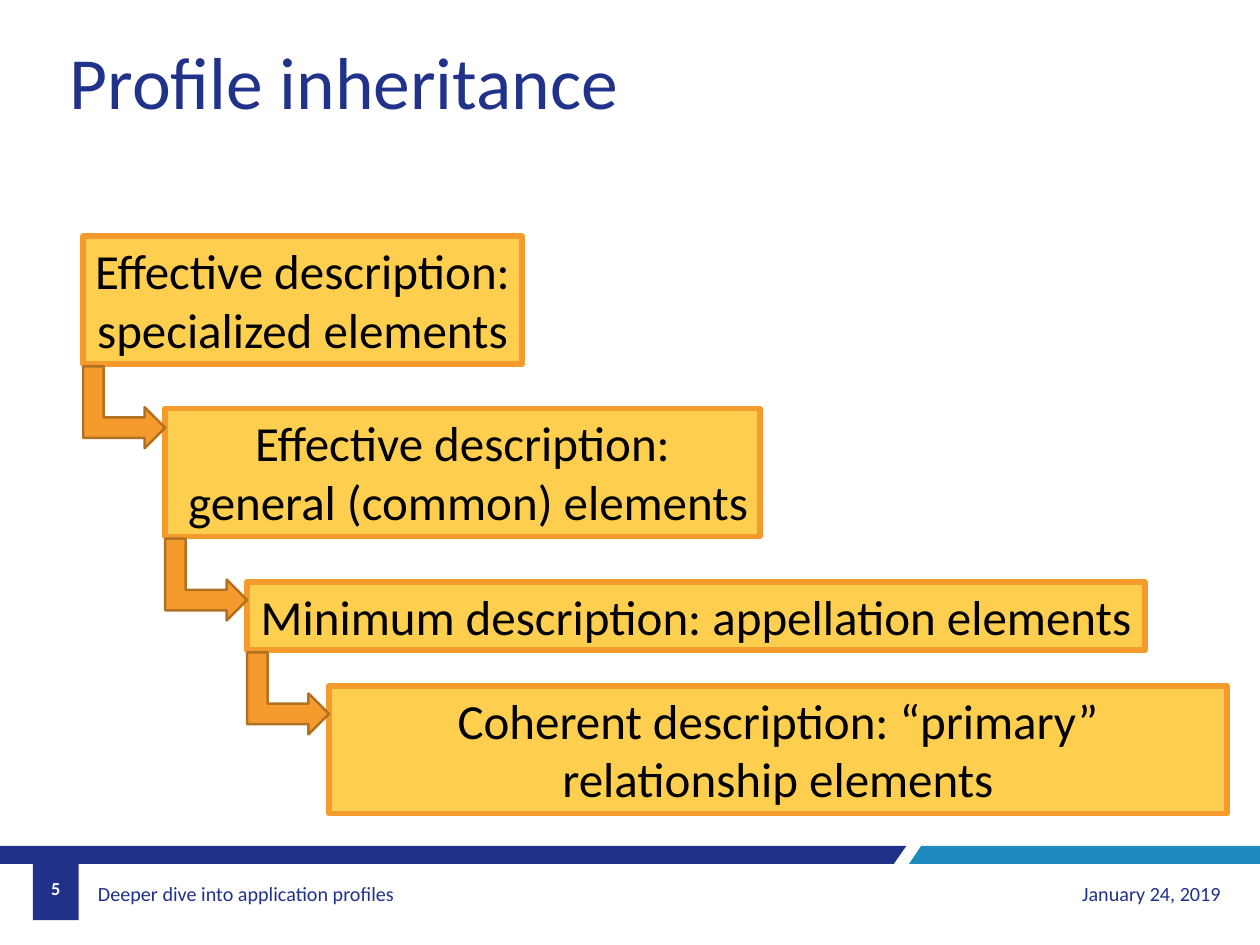
from dataclasses import dataclass

from pptx import Presentation
from pptx.dml.color import RGBColor
from pptx.enum.shapes import MSO_SHAPE
from pptx.enum.text import MSO_ANCHOR, MSO_AUTO_SIZE, PP_ALIGN
from pptx.util import Inches, Pt

COLUMNS, ROWS = 28, 21


@dataclass(frozen=True)
class Theme:
    font: str = "Calibri"
    navy: str = "203189"
    title_color: str = "21328A"
    blue: str = "1D8BC1"
    yellow: str = "FECE4E"
    orange: str = "F59B2D"
    brown: str = "B27120"
    black: str = "000000"
    white: str = "FFFFFF"
    title_size: float = 60
    box_size: float = 40
    footer_size: float = 16.4
    number_size: float = 14.9


class SlideBuilder:
    def __init__(self, presentation, theme):
        self.theme = theme
        self.column = presentation.slide_width / COLUMNS
        self.row = presentation.slide_height / ROWS
        self.slide = presentation.slides.add_slide(presentation.slide_layouts[5])

    def place(self, left, top, width, height):
        return (round(left * self.column), round(top * self.row),
                round(width * self.column), round(height * self.row))

    def paint(self, shape, fill, line=None, line_width=0):
        shape.shadow.inherit = False
        shape.fill.solid()
        shape.fill.fore_color.rgb = RGBColor.from_string(fill)
        if line:
            shape.line.color.rgb = RGBColor.from_string(line)
            shape.line.width = Pt(line_width)
        else:
            shape.line.fill.background()

    def add_lines(self, shape, lines, size, color, align=PP_ALIGN.LEFT,
                  anchor=MSO_ANCHOR.TOP, bold=False, insets=(0.1, 0.05)):
        frame = shape.text_frame
        frame.word_wrap = True
        frame.auto_size = MSO_AUTO_SIZE.NONE
        frame.vertical_anchor = anchor
        frame.margin_left = frame.margin_right = Inches(insets[0])
        frame.margin_top = frame.margin_bottom = Inches(insets[1])
        for index, line in enumerate(lines):
            paragraph = frame.add_paragraph() if index else frame.paragraphs[0]
            paragraph.alignment = align
            run = paragraph.add_run()
            run.text = line
            run.font.name = self.theme.font
            run.font.size = Pt(size)
            run.font.bold = bold
            run.font.color.rgb = RGBColor.from_string(color)

    def title(self, text, *area):
        shape = self.slide.shapes.title
        shape.left, shape.top, shape.width, shape.height = self.place(*area)
        self.add_lines(shape, [text], self.theme.title_size, self.theme.title_color)

    def text(self, text, area, size, color, **style):
        shape = self.slide.shapes.add_textbox(*self.place(*area))
        self.add_lines(shape, [text], size, color, anchor=MSO_ANCHOR.MIDDLE, **style)

    def band(self, points, fill):
        corners = [(round(x * self.column), round(y * self.row)) for x, y in points]
        builder = self.slide.shapes.build_freeform(*corners[0])
        builder.add_line_segments(corners[1:], close=True)
        self.paint(builder.convert_to_shape(), fill)

    def block(self, area, fill, line=None, line_width=0, kind=MSO_SHAPE.RECTANGLE):
        shape = self.slide.shapes.add_shape(kind, *self.place(*area))
        self.paint(shape, fill, line, line_width)
        return shape

    def box(self, lines, *area):
        shape = self.block(area, self.theme.yellow, self.theme.orange, 4.5)
        self.add_lines(shape, lines, self.theme.box_size, self.theme.black,
                       PP_ALIGN.CENTER)

    def step_arrow(self, left, top, size):
        shape = self.block((left, top, size, size), self.theme.orange,
                           self.theme.brown, 2, MSO_SHAPE.BENT_UP_ARROW)
        shape.rotation = 90


def add_footer(builder):
    theme = builder.theme
    top, bottom = 18.8, 19.2
    builder.band([(0, top), (20.14, top), (19.86, bottom), (0, bottom)], theme.navy)
    builder.band([(20.47, top), (COLUMNS, top), (COLUMNS, bottom), (20.2, bottom)],
                 theme.blue)
    builder.block((0.73, top, 1.02, 1.65), theme.navy)
    builder.text("Deeper dive into application profiles", (2.04, 19.31, 7.88, 1.08),
                 theme.footer_size, theme.navy, insets=(0.07, 0.04))
    builder.text("January 24, 2019", (20.14, 19.31, 7.18, 1.08),
                 theme.footer_size, theme.navy, align=PP_ALIGN.RIGHT)
    builder.text("5", (0.73, bottom, 1.02, 1.08), theme.number_size, theme.white,
                 align=PP_ALIGN.CENTER, bold=True)


def add_staircase(builder):
    first_left, step, arrow_gap = 1.85, 1.82, 0.05
    boxes = [
        (["Effective description:", "specialized elements"], 5.25, 9.75, 2.84),
        (["Effective description:", " general (common) elements"], 9.08, 13.22, 2.84),
        (["Minimum description: appellation elements"], 12.94, 19.96, 1.51),
        (["Coherent description: “primary” relationship elements"], 15.24, 19.96, 2.84),
    ]
    for level, (lines, top, width, height) in enumerate(boxes):
        builder.box(lines, first_left + level * step, top, width, height)
    for level, (_, top, _, height) in enumerate(boxes[:-1]):
        builder.step_arrow(first_left + level * step, top + height + arrow_gap, step)


def main():
    presentation = Presentation()
    presentation.slide_width = Inches(14.28)
    presentation.slide_height = Inches(10.71)
    builder = SlideBuilder(presentation, Theme())
    builder.title("Profile inheritance", 1.35, 0.69, 14.76, 2.45)
    add_footer(builder)
    add_staircase(builder)
    presentation.save("out.pptx")


if __name__ == "__main__":
    main()
